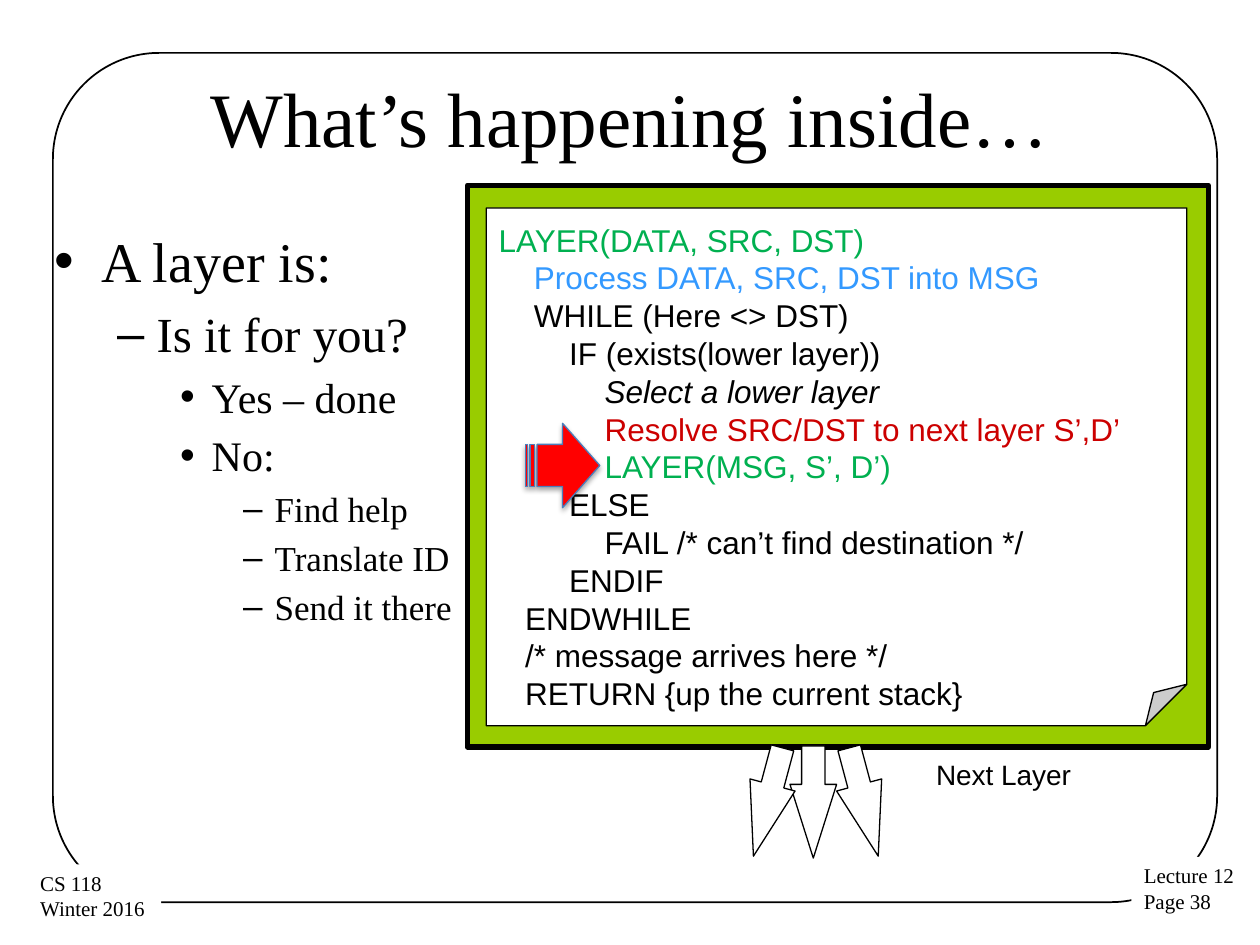
from dataclasses import dataclass
from typing import Optional

import lxml.etree
import pptx
import pptx.dml.color
import pptx.enum.shapes
import pptx.enum.text
import pptx.oxml
import pptx.oxml.ns
import pptx.util

Inches = pptx.util.Inches
Pt = pptx.util.Pt
Kind = pptx.enum.shapes.MSO_SHAPE
Align = pptx.enum.text.PP_ALIGN
Anchor = pptx.enum.text.MSO_ANCHOR

SERIF = "Times New Roman"
SANS = "Arial"
BLACK = "000000"
WHITE = "FFFFFF"
GREEN = "00B050"
SPACE_WIDTH = 0.07


@dataclass
class Box:
    kind: int
    left: float
    top: float
    width: float
    height: float
    fill: Optional[str] = None
    line: Optional[str] = None
    weight: float = 0.75
    adjustments: Optional[dict] = None
    rotation: float = 0


@dataclass
class Line:
    text: str
    size: float
    font: str = SERIF
    color: str = BLACK
    italic: bool = False
    level: int = 0
    indent: float = 0
    spacing: Optional[float] = None
    align: Optional[int] = None


def rgb(color: str):
    return pptx.dml.color.RGBColor.from_string(color)


def set_values(target, values: dict) -> None:
    for name, value in values.items():
        setattr(target, name, value)


def place(shape, left: float, top: float, width: float, height: float) -> None:
    set_values(shape, {"left": Inches(left), "top": Inches(top),
                       "width": Inches(width), "height": Inches(height)})


def adjust(shape, adjustments: dict) -> None:
    guides = shape._element.spPr.find(".//" + pptx.oxml.ns.qn("a:avLst"))
    for guide in list(guides):
        guides.remove(guide)
    for name, value in adjustments.items():
        lxml.etree.SubElement(guides, pptx.oxml.ns.qn("a:gd"),
                              name=name, fmla=f"val {round(value * 100000)}")


def add_box(slide, box: Box):
    shape = slide.shapes.add_shape(box.kind, Inches(box.left), Inches(box.top),
                                   Inches(box.width), Inches(box.height))
    shape.shadow.inherit = False
    shape.rotation = box.rotation
    if box.adjustments:
        adjust(shape, box.adjustments)
    if box.fill:
        shape.fill.solid()
        shape.fill.fore_color.rgb = rgb(box.fill)
    else:
        shape.fill.background()
    if box.line:
        shape.line.color.rgb = rgb(box.line)
        shape.line.width = Pt(box.weight)
    else:
        shape.line.fill.background()
    return shape


def write_lines(shape, lines: list[Line], **frame_values) -> None:
    frame = shape.text_frame
    set_values(frame, {"word_wrap": True, **frame_values})
    for index, line in enumerate(lines):
        paragraph = frame.paragraphs[0] if index == 0 else frame.add_paragraph()
        paragraph.level = line.level
        paragraph.alignment = line.align
        if line.spacing:
            paragraph.line_spacing = Pt(line.spacing)
        if line.indent:
            properties = paragraph._p.get_or_add_pPr()
            properties.set("marL", str(Inches(line.indent)))
        run = paragraph.add_run()
        run.text = line.text
        set_values(run.font, {"name": line.font, "size": Pt(line.size), "italic": line.italic})
        run.font.color.rgb = rgb(line.color)


def add_shadow(shape) -> None:
    effects = shape._element.spPr.find(pptx.oxml.ns.qn("a:effectLst"))
    effects.append(pptx.oxml.parse_xml(
        f'<a:outerShdw {pptx.oxml.ns.nsdecls("a")} blurRad="{Pt(3.1)}" dist="{Pt(1.8)}" '
        'dir="5400000" rotWithShape="0"><a:srgbClr val="000000">'
        '<a:alpha val="35000"/></a:srgbClr></a:outerShdw>'))


def code_line(text: str, spaces: int, color: str = BLACK, italic: bool = False) -> Line:
    return Line(text, 18, SANS, color, italic, indent=spaces * SPACE_WIDTH,
                spacing=21.6, align=Align.LEFT)


FOOTERS = [
    (Box(Kind.RECTANGLE, 8.98, 6.8, 0.93, 0.51, WHITE), ["Lecture 12", "Page 38"]),
    (Box(Kind.RECTANGLE, 0.22, 6.86, 1.06, 0.51, WHITE), ["CS 118", "Winter 2016"]),
]
BULLETS = [
    ("A layer is:", 0), ("Is it for you?", 1), ("Yes – done", 2), ("No:", 2),
    ("Find help", 3), ("Translate ID", 3), ("Send it there", 3),
]
BULLET_SIZES = [32, 28, 24, 20]
CODE = [
    code_line("LAYER(DATA, SRC, DST)", 0, GREEN),
    code_line("Process DATA, SRC, DST into MSG", 4, "3399FF"),
    code_line("WHILE (Here <> DST)", 4),
    code_line("IF (exists(lower layer))", 8),
    code_line("Select a lower layer", 12, italic=True),
    code_line("Resolve SRC/DST to next layer S’,D’", 12, "CC0000"),
    code_line("LAYER(MSG, S’, D’)", 12, GREEN),
    code_line("ELSE", 8),
    code_line("FAIL /* can’t find destination */", 12),
    code_line("ENDIF", 8),
    code_line("ENDWHILE", 3),
    code_line("/* message arrives here */", 3),
    code_line("RETURN {up the current stack}", 3),
]
DOWN_ARROWS = [(6.27, 0), (5.91, 15), (6.67, 345)]


def main() -> None:
    presentation = pptx.Presentation()
    set_values(presentation, {"slide_width": Inches(10), "slide_height": Inches(7.5)})
    slide = presentation.slides.add_slide(presentation.slide_layouts[1])

    title = slide.shapes.title
    place(title, 0.5, 0.3, 9, 1.25)
    write_lines(title, [Line("What’s happening inside…", 44, align=Align.CENTER)],
                vertical_anchor=Anchor.MIDDLE)
    body = slide.placeholders[1]
    place(body, 0.33, 1.75, 9, 4.95)
    write_lines(body, [Line(text, BULLET_SIZES[level], level=level) for text, level in BULLETS],
                auto_size=pptx.enum.text.MSO_AUTO_SIZE.NONE)

    add_box(slide, Box(Kind.ROUNDED_RECTANGLE, 0.42, 0.42, 9.24, 6.74,
                       line=BLACK, weight=1, adjustments={"adj": 0.125}))
    for box, texts in FOOTERS:
        write_lines(add_box(slide, box), [Line(text, 12, align=Align.LEFT) for text in texts],
                    word_wrap=False, vertical_anchor=Anchor.TOP)

    add_box(slide, Box(Kind.RECTANGLE, 3.71, 1.47, 5.88, 4.46, "99CC00", BLACK, 3))
    for left, rotation in DOWN_ARROWS:
        add_box(slide, Box(Kind.DOWN_ARROW, left, 5.92, 0.37, 0.89, WHITE, BLACK,
                           adjustments={"adj1": 0.5, "adj2": 1.58}, rotation=rotation))
    label = slide.shapes.add_textbox(Inches(6.75), Inches(5.96), Inches(2.43), Inches(0.87))
    write_lines(label, [Line("Next Layer", 16, SANS, align=Align.CENTER)])

    page = add_box(slide, Box(Kind.FOLDED_CORNER, 3.86, 1.65, 5.56, 4.11, WHITE, BLACK,
                              adjustments={"adj": 0.08}))
    write_lines(page, CODE, vertical_anchor=Anchor.TOP,
                margin_top=Inches(0.1), margin_bottom=Inches(0.1))
    pointer = add_box(slide, Box(Kind.STRIPED_RIGHT_ARROW, 4.17, 3.36, 0.59, 0.67,
                                 "FF0000", "4B7EBC"))
    add_shadow(pointer)
    presentation.save("out.pptx")


if __name__ == "__main__":
    main()
